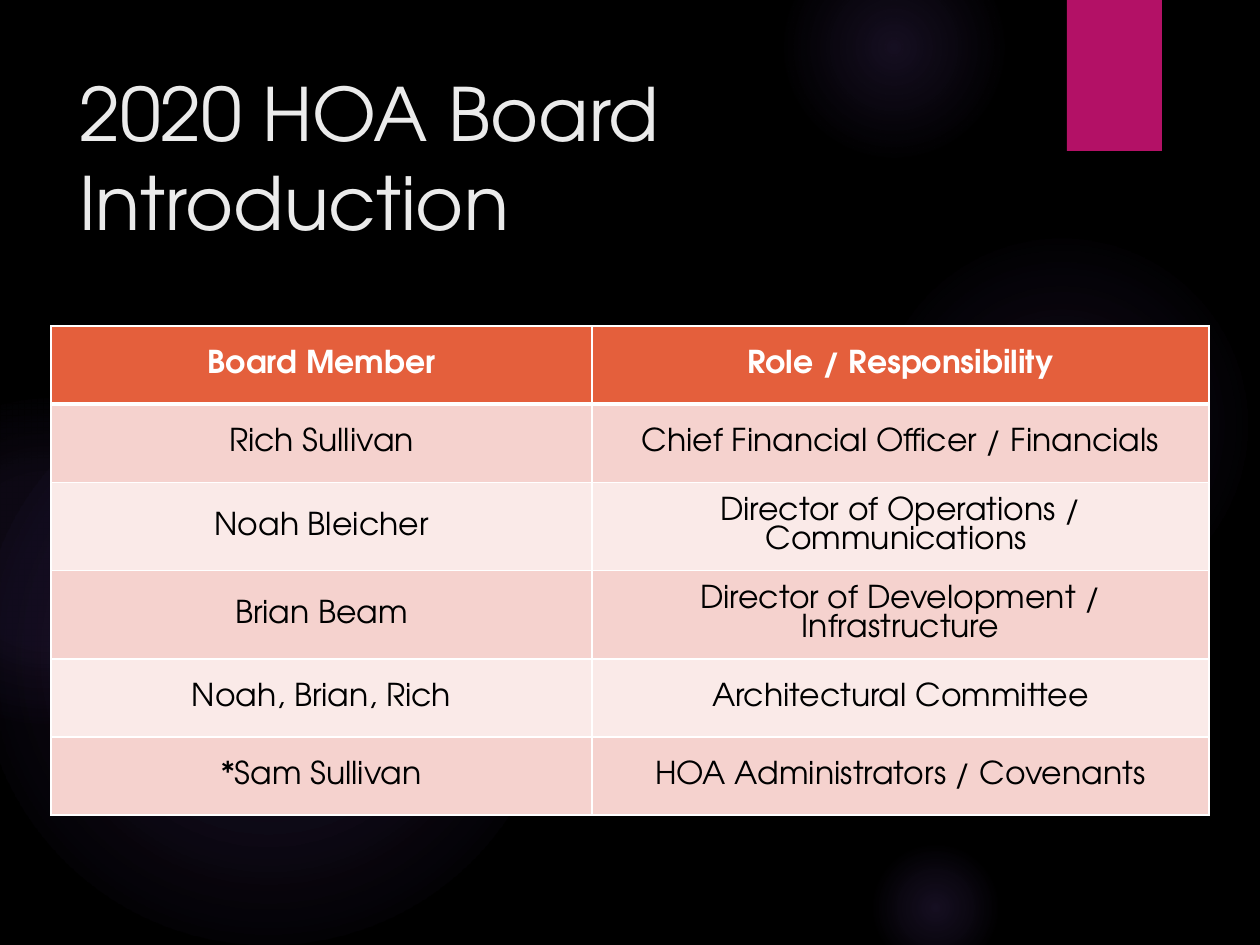
from lxml import etree
from pptx import Presentation
from pptx.dml.color import RGBColor
from pptx.enum.shapes import MSO_SHAPE
from pptx.enum.text import MSO_ANCHOR, PP_ALIGN
from pptx.oxml import parse_xml
from pptx.oxml.ns import nsdecls, qn
from pptx.util import Emu, Pt

OVAL, RECTANGLE = MSO_SHAPE.OVAL, MSO_SHAPE.RECTANGLE
MIDDLE, CENTER = MSO_ANCHOR.MIDDLE, PP_ALIGN.CENTER
SCALE = 914400 // 126
FONT = "TeX Gyre Adventor"
GLOW, WHITE, BLACK = "9B6BF2", "FFFFFF", "000000"
HEADER, BANDS = "E45F3C", ("F5D2CE", "FAEAE8")

TITLE = ("2020 HOA Board", "Introduction")
BOARD = [
    ("Board Member", "Role / Responsibility"),
    ("Rich Sullivan", "Chief Financial Officer / Financials"),
    ("Noah Bleicher", "Director of Operations / Communications "),
    ("Brian Beam", "Director of Development / Infrastructure"),
    ("Noah, Brian, Rich", "Architectural Committee"),
    ("*Sam Sullivan", "HOA Administrators / Covenants"),
]
COLUMN_WIDTHS = (541, 617)
TABLE_HEIGHT = 469
GLOWS = [
    (868, 231, 388, ((0, 7), (36, 6), (69, 0))),
    (784, -63, 220, ((0, 14), (36, 7), (73, 0))),
    (868, 840, 136, ((0, 14), (36, 7), (66, 0))),
    (-21, 368, 577, ((0, 11), (36, 10), (75, 0))),
    (-116, 399, 325, ((0, 8), (36, 8), (72, 0))),
]


def px(*lengths):
    return [Emu(length * SCALE) for length in lengths]


def color(value):
    return RGBColor.from_string(value)


def add_run(paragraph, text, size, ink, bold=False):
    run = paragraph.add_run()
    run.text = text
    run.font.name = FONT
    run.font.size = Pt(size)
    run.font.bold = bold
    run.font.color.rgb = color(ink)


def add_plain_shape(slide, kind, *box):
    shape = slide.shapes.add_shape(kind, *px(*box))
    shape.shadow.inherit = False
    shape.line.fill.background()
    return shape


def add_glow(slide, left, top, diameter, stops):
    glow = add_plain_shape(slide, OVAL, left, top, diameter, diameter)
    glow.fill.background()
    stop_list = "".join(
        f'<a:gs pos="{position * 1000}"><a:srgbClr val="{GLOW}">'
        f'<a:alpha val="{opacity * 1000}"/></a:srgbClr></a:gs>'
        for position, opacity in stops
    )
    gradient = parse_xml(
        f'<a:gradFill {nsdecls("a")} rotWithShape="1"><a:gsLst>{stop_list}</a:gsLst>'
        '<a:path path="circle"><a:fillToRect l="50000" t="50000" r="50000" b="50000"/>'
        "</a:path></a:gradFill>"
    )
    properties = glow.element.spPr
    properties.replace(properties.find(qn("a:noFill")), gradient)


def set_borders(cell, bottom_points):
    properties = cell._tc.get_or_add_tcPr()
    widths = {"lnL": 1, "lnR": 1, "lnT": 1, "lnB": bottom_points}
    for index, (side, points) in enumerate(widths.items()):
        border = etree.Element(qn(f"a:{side}"), w=str(Pt(points)))
        fill = etree.SubElement(border, qn("a:solidFill"))
        etree.SubElement(fill, qn("a:srgbClr"), val=WHITE)
        properties.insert(index, border)


def add_title(slide):
    frame = slide.shapes.add_textbox(*px(67, 60, 973, 193)).text_frame
    frame.word_wrap = True
    frame.vertical_anchor = MIDDLE
    paragraph = frame.paragraphs[0]
    add_run(paragraph, TITLE[0], 42, "EBEBEB")
    paragraph.add_line_break()
    add_run(paragraph, TITLE[1], 42, "EBEBEB")


def add_board_table(slide):
    box = px(51, 326, sum(COLUMN_WIDTHS), TABLE_HEIGHT)
    table = slide.shapes.add_table(len(BOARD), len(COLUMN_WIDTHS), *box).table
    for column, width in zip(table.columns, px(*COLUMN_WIDTHS)):
        column.width = width
    for row_index, entries in enumerate(BOARD):
        is_header = row_index == 0
        for column_index, entry in enumerate(entries):
            cell = table.cell(row_index, column_index)
            cell.fill.solid()
            cell.fill.fore_color.rgb = color(HEADER if is_header else BANDS[(row_index - 1) % 2])
            cell.vertical_anchor = MIDDLE
            set_borders(cell, 3 if is_header else 1)
            paragraph = cell.text_frame.paragraphs[0]
            paragraph.alignment = CENTER
            add_run(paragraph, entry, 18, WHITE if is_header else BLACK, is_header)


def main():
    deck = Presentation()
    deck.slide_width, deck.slide_height = px(1260, 945)
    slide = deck.slides.add_slide(deck.slide_layouts[6])
    slide.background.fill.solid()
    slide.background.fill.fore_color.rgb = color(BLACK)
    for glow in GLOWS:
        add_glow(slide, *glow)
    ribbon = add_plain_shape(slide, RECTANGLE, 1067, 0, 95, 151)
    ribbon.fill.solid()
    ribbon.fill.fore_color.rgb = color("B31166")
    add_title(slide)
    add_board_table(slide)
    deck.save("out.pptx")


if __name__ == "__main__":
    main()
